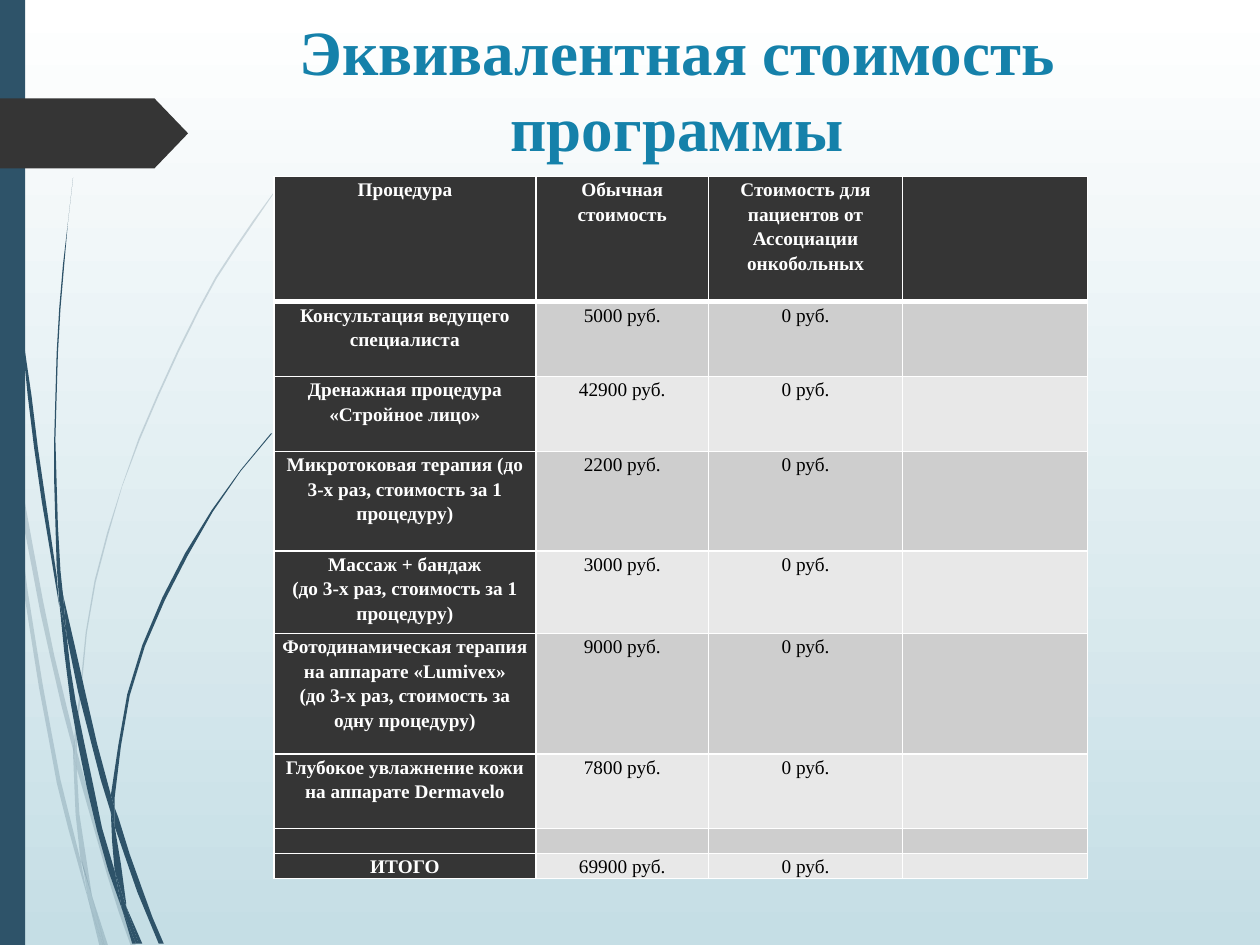
from math import ceil, hypot

from lxml.etree import SubElement
from pptx import Presentation
from pptx.dml.color import RGBColor
from pptx.enum.shapes import MSO_SHAPE as Preset
from pptx.enum.text import MSO_ANCHOR as Anchor, PP_ALIGN as Align
from pptx.oxml.ns import qn
from pptx.util import Pt

# Content
TITLE = "Эквивалентная стоимость программы"
HEADER = ("Процедура", "Обычная стоимость",
          "Стоимость для пациентов от Ассоциации онкобольных", "")
FREE = "0 руб."
PROCEDURES = [
    ("Консультация ведущего специалиста", "5000 руб.", FREE, ""),
    ("Дренажная процедура «Стройное лицо»", "42900 руб.", FREE, ""),
    ("Микротоковая терапия (до 3-х раз, стоимость за 1 процедуру)", "2200 руб.", FREE, ""),
    ("Массаж + бандаж\n(до 3-х раз, стоимость за 1 процедуру)", "3000 руб.", FREE, ""),
    ("Фотодинамическая терапия на аппарате «Lumivex»\n"
     "(до 3-х раз, стоимость за одну процедуру)", "9000 руб.", FREE, ""),
    ("Глубокое увлажнение кожи на аппарате Dermavelo", "7800 руб.", FREE, ""),
    ("", "", "", ""),
    ("ИТОГО", "69900 руб.", FREE, ""),
]
COLUMN_WIDTHS = (149.8, 98.6, 110.9, 105.8)
ROW_HEIGHTS = (71.6, 42.8, 42.8, 56.9, 47.1, 68.9, 42.8, 14.2, 14.2)

# Grass blades: each piece is two smooth edges, in steps of GRID points
GRID = 0.72
PALE_BLADES = [
    ([(8, 350), (0, 282)], [(0, 299), (8, 350)]),
    ([(10, 345), (12, 376), (40, 522), (59, 599)], [(59, 586), (43, 520), (10, 345)]),
    ([(61, 610), (85, 694), (104, 751)], [(108, 751), (88, 692), (64, 607), (61, 596)]),
    ([(73, 711), (83, 751)], [(86, 751), (73, 711)]),
    ([(8, 350), (19, 470), (45, 621), (64, 693), (70, 714)],
     [(64, 683), (48, 619), (22, 469), (12, 376), (8, 350)]),
    ([(58, 599), (60, 646), (64, 683), (73, 711)], [(63, 646), (61, 610), (58, 599)]),
    ([(217, 153), (186, 197), (158, 244), (110, 348), (75, 461), (59, 584)],
     [(61, 596), (61, 584), (76, 462), (111, 349), (159, 245), (187, 198), (217, 154)]),
    ([(70, 714), (79, 751)], [(82, 751), (70, 714)]),
    ([(58, 599), (61, 610)], [(61, 596), (59, 586)]),
    ([(65, 683), (70, 714), (82, 751)], [(83, 751), (73, 711), (65, 683)]),
]
DARK_BLADES = [
    ([(2, 0), (5, 110), (14, 233), (27, 355), (47, 481)],
     [(45, 457), (30, 355), (15, 232), (6, 109), (3, 0)]),
    ([(50, 472), (53, 505), (73, 592), (88, 645)], [(88, 631), (77, 590), (50, 472)]),
    ([(91, 656), (109, 708), (126, 749)], [(130, 749), (113, 706), (94, 649), (91, 641)]),
    ([(47, 477), (56, 557), (77, 659), (97, 722)],
     [(91, 691), (81, 657), (60, 556), (53, 505), (47, 477)]),
    ([(58, 141), (47, 245), (43, 349), (45, 449), (49, 472)],
     [(50, 472), (48, 453), (44, 349), (48, 245), (58, 141)]),
    ([(100, 719), (110, 749)], [(113, 749), (100, 719)]),
    ([(45, 449), (47, 477), (53, 505)], [(50, 472), (45, 449)]),
    ([(215, 344), (191, 373), (168, 405), (129, 474), (101, 551), (88, 631)],
     [(91, 641), (91, 633), (103, 552), (131, 476), (169, 406), (191, 374), (216, 344)]),
    ([(97, 722), (105, 749)], [(108, 749), (97, 722)]),
    ([(88, 645), (91, 691), (100, 719)], [(100, 716), (91, 656), (88, 645)]),
    ([(88, 645), (91, 656)], [(91, 641), (88, 631)]),
    ([(91, 691), (97, 722), (108, 749)], [(110, 749), (100, 719), (91, 691)]),
]

THEME = {
    "font": "Times New Roman", "title_size": 36, "table_size": 11,
    "title": "1581AA", "blue": "2E5369", "dark": "353535", "white": "FFFFFF",
    "black": "000000", "bands": ("CECECE", "E8E8E8"), "sky": ("FFFFFF", "C5DEE5"),
    "pale_opacity": 20, "border": 1, "header_border": 3,
}


def color(value):
    return RGBColor.from_string(value)


def set_values(target, **values):
    for name, value in values.items():
        setattr(target, name, value)


def set_text(paragraph, text, size, ink, bold):
    paragraph.text = text
    paragraph.alignment = Align.CENTER
    for run in paragraph.runs:
        set_values(run.font, name=THEME["font"], size=Pt(size), bold=bold)
        run.font.color.rgb = color(ink)


def paint(shape, value, opacity=100):
    shape.shadow.inherit = False
    shape.line.fill.background()
    shape.fill.solid()
    shape.fill.fore_color.rgb = color(value)
    if opacity < 100:
        tint = next(shape._element.spPr.iter(qn("a:srgbClr")))
        SubElement(tint, qn("a:alpha"), val=str(opacity * 1000))


def smooth(knots, stride=45):
    """Points of a smooth curve through every knot, about one per stride."""
    tangents = []
    for i in range(len(knots)):
        (x0, y0), (x1, y1) = knots[max(i - 1, 0)], knots[min(i + 1, len(knots) - 1)]
        span = hypot(x1 - x0, y1 - y0)
        tangents.append(((x1 - x0) / span, (y1 - y0) / span))
    points = [knots[0]]
    for start, end, leave, arrive in zip(knots, knots[1:], tangents, tangents[1:]):
        length = hypot(end[0] - start[0], end[1] - start[1])
        steps = ceil(length / stride)
        for t in (step / steps for step in range(1, steps + 1)):
            rise = t * t * (3 - 2 * t)
            points.append(tuple(
                a + (b - a) * rise + length * (u * t * (1 - t) ** 2 - v * t * t * (1 - t))
                for a, b, u, v in zip(start, end, leave, arrive)))
    return points


def add_blade(slide, edges, opacity):
    first, *rest = [point for edge in edges for point in smooth(edge)]
    builder = slide.shapes.build_freeform(*first, scale=Pt(GRID))
    builder.add_line_segments(rest, close=True)
    paint(builder.convert_to_shape(), THEME["blue"], opacity)


def add_borders(cell, **widths):
    properties = cell._tc.get_or_add_tcPr()
    for side in "LRTB":
        width = widths.get(side, THEME["border"])
        line = SubElement(properties, qn(f"a:ln{side}"), w=str(Pt(width)))
        SubElement(SubElement(line, qn("a:solidFill")), qn("a:srgbClr"), val=THEME["white"])


def add_price_table(slide):
    rows = [HEADER, *PROCEDURES]
    table = slide.shapes.add_table(
        len(rows), len(HEADER), Pt(156.5), Pt(100.8),
        Pt(sum(COLUMN_WIDTHS)), Pt(sum(ROW_HEIGHTS))).table
    for column, width in zip(table.columns, COLUMN_WIDTHS):
        column.width = Pt(width)
    for r, (values, height) in enumerate(zip(rows, ROW_HEIGHTS)):
        table.rows[r].height = Pt(height)
        for c, text in enumerate(values):
            cell, heading = table.cell(r, c), r == 0 or c == 0
            set_values(cell, margin_left=Pt(4.3), margin_right=Pt(4.3),
                       margin_top=0, margin_bottom=0)
            edge = {0: "B", 1: "T"}.get(r)
            add_borders(cell, **({edge: THEME["header_border"]} if edge else {}))
            cell.fill.solid()
            cell.fill.fore_color.rgb = color(
                THEME["dark"] if heading else THEME["bands"][(r - 1) % 2])
            paragraph = cell.text_frame.paragraphs[0]
            if text:
                set_text(paragraph, text, THEME["table_size"],
                         THEME["white" if heading else "black"], heading)
                paragraph.line_spacing = 1.15
            else:  # keeps an empty row as low as a line of text
                ending = paragraph._p.get_or_add_endParaRPr()
                ending.set("sz", str(THEME["table_size"] * 100))


def main():
    presentation = Presentation()
    set_values(presentation, slide_width=Pt(720), slide_height=Pt(540))
    slide = presentation.slides.add_slide(presentation.slide_layouts[5])

    # Background
    sky = slide.background.fill
    sky.gradient()
    sky.gradient_angle = 270
    for stop, value in zip(sky.gradient_stops, THEME["sky"]):
        stop.color.rgb = color(value)

    # Side decoration
    for blades, opacity in ((PALE_BLADES, THEME["pale_opacity"]), (DARK_BLADES, 100)):
        for edges in blades:
            add_blade(slide, edges, opacity)
    bar = slide.shapes.add_shape(Preset.RECTANGLE, 0, 0, Pt(14.4), Pt(540))
    paint(bar, THEME["blue"])
    tag = slide.shapes.add_shape(Preset.PENTAGON, 0, Pt(56.2), Pt(107.5), Pt(40))
    tag.adjustments[0] = 0.48
    paint(tag, THEME["dark"])

    # Title
    title = slide.shapes.title
    set_values(title, left=Pt(127.4), top=0, width=Pt(519.1), height=Pt(100.8))
    set_values(title.text_frame, word_wrap=True, vertical_anchor=Anchor.MIDDLE)
    set_text(title.text_frame.paragraphs[0], TITLE, THEME["title_size"], THEME["title"], True)

    add_price_table(slide)
    presentation.save("out.pptx")


if __name__ == "__main__":
    main()
